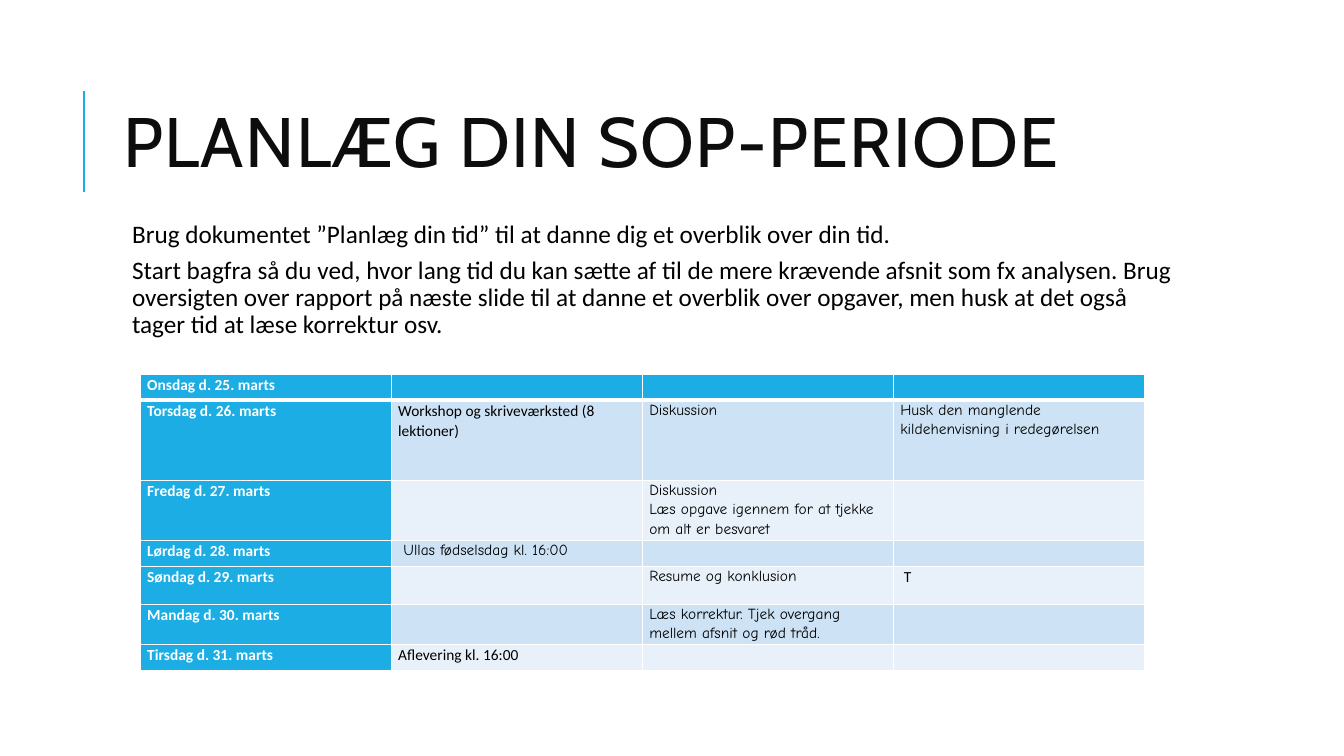
from lxml import etree
from pptx import Presentation
from pptx.dml.color import RGBColor
from pptx.enum import shapes, text
from pptx.oxml import ns
from pptx.util import Inches, Pt

TITLE = "PLANLÆG DIN SOP-PERIODE"
ADVICE = [
    "Brug dokumentet ”Planlæg din tid” til at danne dig et overblik over din tid.",
    "Start bagfra så du ved, hvor lang tid du kan sætte af til de mere krævende afsnit som fx "
    "analysen. Brug oversigten over rapport på næste slide til at danne et overblik over opgaver, "
    "men husk at det også tager tid at læse korrektur osv.",
]
PRINTED, HANDWRITTEN = "Calibri", "Comic Neue"
EMPTY = ("", PRINTED)

# Each day: label, row height, then three (text, font) entries
PLAN = [
    ("Onsdag d. 25. marts", 0.26, EMPTY, EMPTY, EMPTY),
    ("Torsdag d. 26. marts", 0.8,
     ("Workshop og skriveværksted (8 lektioner)", PRINTED),
     ("Diskussion", HANDWRITTEN),
     ("Husk den manglende kildehenvisning i redegørelsen", HANDWRITTEN)),
    ("Fredag d. 27. marts", 0.57, EMPTY,
     ("Diskussion\nLæs opgave igennem for at tjekke om alt er besvaret", HANDWRITTEN), EMPTY),
    ("Lørdag d. 28. marts", 0.26, (" Ullas fødselsdag kl. 16:00", HANDWRITTEN), EMPTY, EMPTY),
    ("Søndag d. 29. marts", 0.38, EMPTY,
     ("Resume og konklusion", HANDWRITTEN), (" T", PRINTED)),
    ("Mandag d. 30. marts", 0.38, EMPTY,
     ("Læs korrektur. Tjek overgang mellem afsnit og rød tråd.", HANDWRITTEN), EMPTY),
    ("Tirsdag d. 31. marts", 0.26, ("Aflevering kl. 16:00", PRINTED), EMPTY, EMPTY),
]

ACCENT = RGBColor(0x1C, 0xAD, 0xE4)
BANDS = [RGBColor(0xE8, 0xF1, 0xFA), RGBColor(0xCD, 0xE3, 0xF5)]
WHITE = RGBColor(0xFF, 0xFF, 0xFF)
BLACK = RGBColor(0, 0, 0)
TITLE_COLOR = RGBColor(0x0D, 0x0D, 0x0D)
LEFT, WIDTH = Inches(1.12), Inches(10.63)
COLUMN_WIDTH = Inches(2.49)


def style(font, name, size, color, bold=False):
    font.name, font.size, font.bold = name, Pt(size), bold
    font.color.rgb = color


def add_title(page):
    title = page.shapes.title
    title.left, title.top, title.width, title.height = LEFT, Inches(0.64), WIDTH, Inches(1.64)
    frame = title.text_frame
    frame.text = TITLE
    frame.word_wrap = True
    frame.auto_size = text.MSO_AUTO_SIZE.NONE
    frame.vertical_anchor = text.MSO_ANCHOR.MIDDLE
    para = frame.paragraphs[0]
    para.alignment = text.PP_ALIGN.LEFT
    para.line_spacing = 0.8
    span = para.runs[0]
    style(span.font, "Cabin", 50, TITLE_COLOR)
    span.font._element.set("spc", "100")

    x = Inches(0.83)
    rule = page.shapes.add_connector(shapes.MSO_CONNECTOR.STRAIGHT, x, Inches(1.9), x, Inches(0.9))
    rule.line.color.rgb = ACCENT
    rule.line.width = Pt(1.5)
    etree.SubElement(rule._element.spPr, ns.qn("a:effectLst"))


def add_advice(page):
    box = page.shapes.add_textbox(LEFT, Inches(2.15), WIDTH, Inches(1.4))
    frame = box.text_frame
    frame.word_wrap = True
    frame.margin_left = Inches(0.19)
    frame.margin_right = frame.margin_top = frame.margin_bottom = Inches(0.05)
    frame.text = "\n".join(ADVICE)
    for para in frame.paragraphs:
        para.line_spacing = 0.9
        para.space_before, para.space_after = Pt(2), Pt(4)
        style(para.runs[0].font, PRINTED, 18, BLACK)


def set_borders(cell, **widths):
    """Draw white borders; widths are points by side: L, R, T, B."""
    for side, width in widths.items():
        line = etree.SubElement(cell._tc.get_or_add_tcPr(), ns.qn(f"a:ln{side}"), w=str(Pt(width)))
        fill = etree.SubElement(line, ns.qn("a:solidFill"))
        etree.SubElement(fill, ns.qn("a:srgbClr"), val=str(WHITE))


def fill_cell(cell, words, font, color, bold):
    cell.margin_left = cell.margin_right = Inches(0.07)
    cell.margin_top = cell.margin_bottom = 0
    cell.text_frame.text = words
    for para in cell.text_frame.paragraphs:
        para.line_spacing = 1.07
        for span in para.runs:
            style(span.font, font, 11, color, bold)
        if not para.runs:
            etree.SubElement(para._p, ns.qn("a:endParaRPr"), sz="1100")


def add_plan(page):
    height = sum(day[1] for day in PLAN)
    frame = page.shapes.add_table(len(PLAN), 4, Inches(1.39), Inches(3.71),
                                  4 * COLUMN_WIDTH, Inches(height))
    table = frame.table
    for column in table.columns:
        column.width = COLUMN_WIDTH
    for r, (day, row_height, *entries) in enumerate(PLAN):
        table.rows[r].height = Inches(row_height)
        for c, (words, font) in enumerate([(day, PRINTED), *entries]):
            cell = table.cell(r, c)
            heading = r == 0 or c == 0
            set_borders(cell, L=1, R=1, T=3 if r == 1 else 1, B=3 if r == 0 else 1)
            cell.fill.solid()
            cell.fill.fore_color.rgb = ACCENT if heading else BANDS[r % 2]
            fill_cell(cell, words, font, WHITE if heading else BLACK, heading)


def main():
    deck = Presentation()
    deck.slide_width, deck.slide_height = Inches(13.33), Inches(7.5)
    page = deck.slides.add_slide(deck.slide_layouts[5])
    add_title(page)
    add_advice(page)
    add_plan(page)
    deck.save("out.pptx")


if __name__ == "__main__":
    main()
